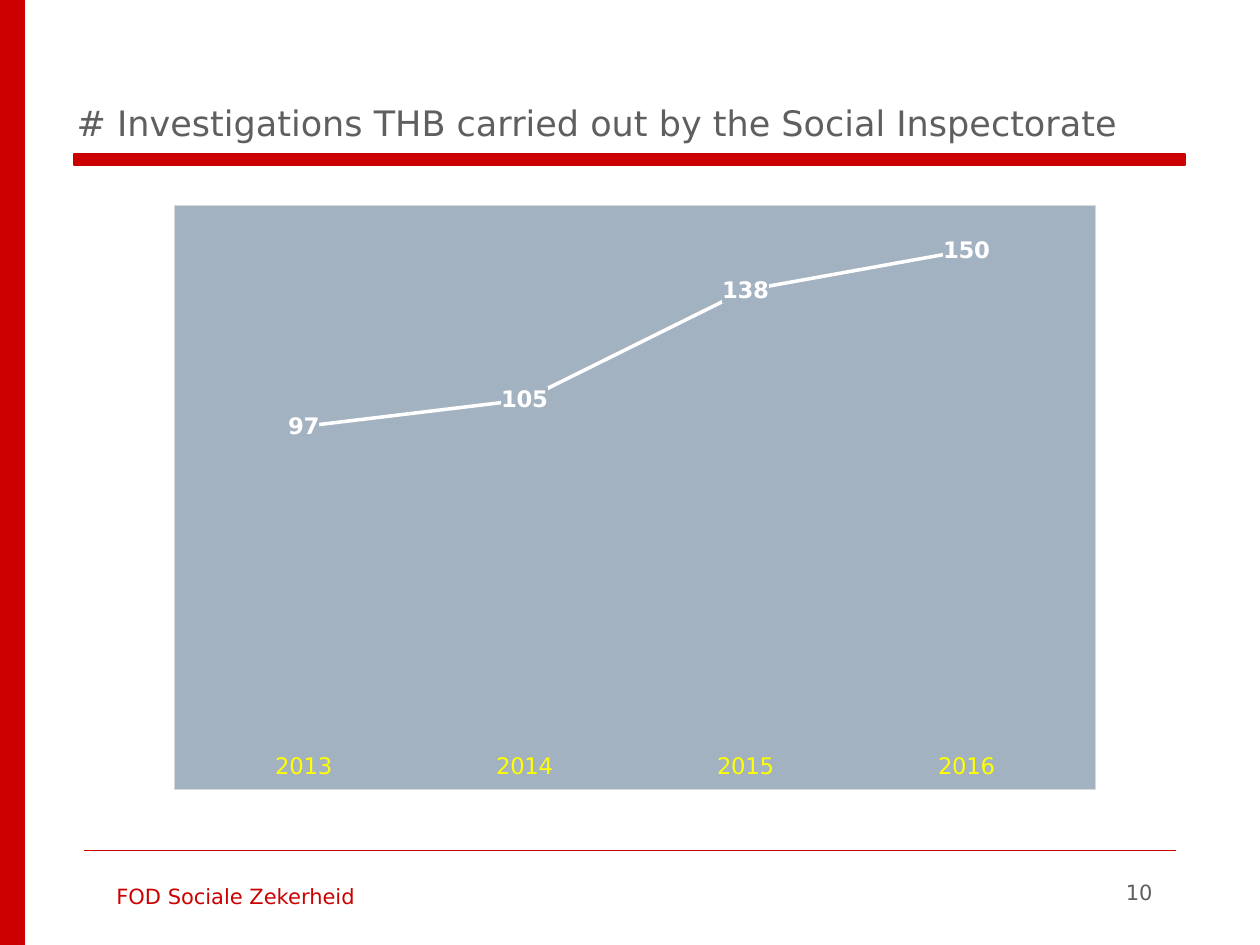
from dataclasses import dataclass

import pptx
import pptx.chart.data
import pptx.dml.color
import pptx.enum.chart
import pptx.enum.shapes
import pptx.enum.text
import pptx.oxml
import pptx.oxml.ns
import pptx.util

EMU_PER_PX = 914400 / 126
FONT = "DejaVu Sans"
RED = "CC0000"
GRAY = "5F5F5F"
WHITE = "FFFFFF"
PANEL = "A3B2C1"
PANEL_BORDER = "D9D9D9"
YELLOW = "FFFF00"


@dataclass(frozen=True)
class Box:
    left: int
    top: int
    width: int
    height: int


@dataclass(frozen=True)
class Bar:
    box: Box
    outlined: bool


BARS = [
    Bar(Box(74, 154, 1111, 11), True),
    Bar(Box(0, 0, 25, 945), False),
]


def px(length: int) -> int:
    return round(length * EMU_PER_PX)


def place(box: Box) -> tuple[int, int, int, int]:
    return px(box.left), px(box.top), px(box.width), px(box.height)


def color(value: str) -> pptx.dml.color.RGBColor:
    return pptx.dml.color.RGBColor.from_string(value)


def format_font(font, size: float, value: str, bold: bool = False) -> None:
    font.name = FONT
    font.size = pptx.util.Pt(size)
    font.bold = bold
    font.color.rgb = color(value)


def write_text(shape, text: str, *, size: float, value: str, align="LEFT",
               anchor="TOP", line_spacing=1.0, hanging: int = 0) -> None:
    frame = shape.text_frame
    frame.word_wrap = True
    frame.auto_size = pptx.enum.text.MSO_AUTO_SIZE.NONE
    frame.vertical_anchor = pptx.enum.text.MSO_ANCHOR[anchor]
    paragraph = frame.paragraphs[0]
    paragraph.alignment = pptx.enum.text.PP_ALIGN[align]
    paragraph.line_spacing = line_spacing
    if hanging:
        properties = paragraph._p.get_or_add_pPr()
        properties.set("marL", str(px(hanging)))
        properties.set("indent", str(-px(hanging)))
    run = paragraph.add_run()
    run.text = text
    format_font(run.font, size, value)


def draw_bar(slide, bar: Bar) -> None:
    shape = slide.shapes.add_shape(
        pptx.enum.shapes.MSO_SHAPE.RECTANGLE, *place(bar.box))
    shape.shadow.inherit = False
    shape.fill.solid()
    shape.fill.fore_color.rgb = color(RED)
    if bar.outlined:
        shape.line.color.rgb = color(RED)
        shape.line.width = pptx.util.Pt(0.75)
    else:
        shape.line.fill.background()


def draw_footer_line(slide) -> None:
    connector = slide.shapes.add_connector(
        pptx.enum.shapes.MSO_CONNECTOR.STRAIGHT, px(84), px(850), px(1176), px(850))
    connector.line.color.rgb = color(RED)
    connector.line.width = pptx.util.Pt(0.25)
    connector._element.spPr.append(pptx.oxml.parse_xml(
        f'<a:effectLst {pptx.oxml.ns.nsdecls("a")}/>'))


def chart_fill(border: str = ""):
    line = (f'<a:ln w="9525"><a:solidFill><a:srgbClr val="{border}"/></a:solidFill></a:ln>'
            if border else '<a:ln><a:noFill/></a:ln>')
    return pptx.oxml.parse_xml(
        f'<c:spPr {pptx.oxml.ns.nsdecls("c", "a")}>'
        f'<a:solidFill><a:srgbClr val="{PANEL}"/></a:solidFill>{line}</c:spPr>')


def style_panel(chart) -> None:
    space = chart._chartSpace
    space.find(pptx.oxml.ns.qn("c:chart")).addnext(chart_fill(PANEL_BORDER))
    plot_area = space.chart.plotArea
    for layout in plot_area.findall(pptx.oxml.ns.qn("c:layout")):
        plot_area.remove(layout)
    plot_area.insert(0, pptx.oxml.parse_xml(
        f'<c:layout {pptx.oxml.ns.nsdecls("c")}><c:manualLayout>'
        '<c:layoutTarget val="inner"/><c:xMode val="edge"/><c:yMode val="edge"/>'
        '<c:x val="0.02"/><c:y val="0.02"/><c:w val="0.96"/><c:h val="0.91"/>'
        '</c:manualLayout></c:layout>'))


def label_values(series) -> None:
    labels = series.data_labels
    labels.show_value = True
    labels.position = pptx.enum.chart.XL_LABEL_POSITION.CENTER
    format_font(labels.font, 13, WHITE, bold=True)
    labels._element.find(pptx.oxml.ns.qn("c:txPr")).addprevious(chart_fill())


def draw_chart(slide, box: Box) -> None:
    data = pptx.chart.data.CategoryChartData()
    data.categories = ["2013", "2014", "2015", "2016"]
    data.add_series("Series 1", [97, 105, 138, 150])
    chart = slide.shapes.add_chart(
        pptx.enum.chart.XL_CHART_TYPE.LINE, *place(box), data).chart
    chart.has_legend = False
    chart.has_title = False
    format_font(chart.font, 10, "000000")
    style_panel(chart)

    value_axis = chart.value_axis
    value_axis.visible = False
    value_axis.has_major_gridlines = False
    value_axis.minimum_scale = 0
    value_axis.maximum_scale = 160

    category_axis = chart.category_axis
    category_axis.major_tick_mark = pptx.enum.chart.XL_TICK_MARK.NONE
    category_axis.format.line.fill.background()
    format_font(category_axis.tick_labels.font, 13, YELLOW)

    plot = chart.plots[0]
    plot.vary_by_categories = False
    series = plot.series[0]
    series.smooth = False
    series.marker.style = pptx.enum.chart.XL_MARKER_STYLE.NONE
    series.format.line.color.rgb = color(WHITE)
    series.format.line.width = pptx.util.Pt(2)
    label_values(series)


def main() -> None:
    presentation = pptx.Presentation()
    presentation.slide_width = px(1260)
    presentation.slide_height = px(945)
    slide = presentation.slides.add_slide(presentation.slide_layouts[5])

    draw_footer_line(slide)
    for bar in BARS:
        draw_bar(slide, bar)

    footer = slide.shapes.add_textbox(*place(Box(104, 870, 605, 66)))
    write_text(footer, "FOD Sociale Zekerheid", size=12, value=RED, line_spacing=1.3)
    number = slide.shapes.add_textbox(*place(Box(903, 873, 262, 63)))
    write_text(number, "10", size=12, value=GRAY, align="RIGHT")

    title = slide.shapes.title
    title.left, title.top, title.width, title.height = place(Box(64, 86, 1150, 64))
    write_text(title, "# Investigations THB carried out by the Social Inspectorate",
               size=20, value=GRAY, anchor="BOTTOM", hanging=63)

    draw_chart(slide, Box(174, 205, 922, 585))
    presentation.save("out.pptx")


if __name__ == "__main__":
    main()
